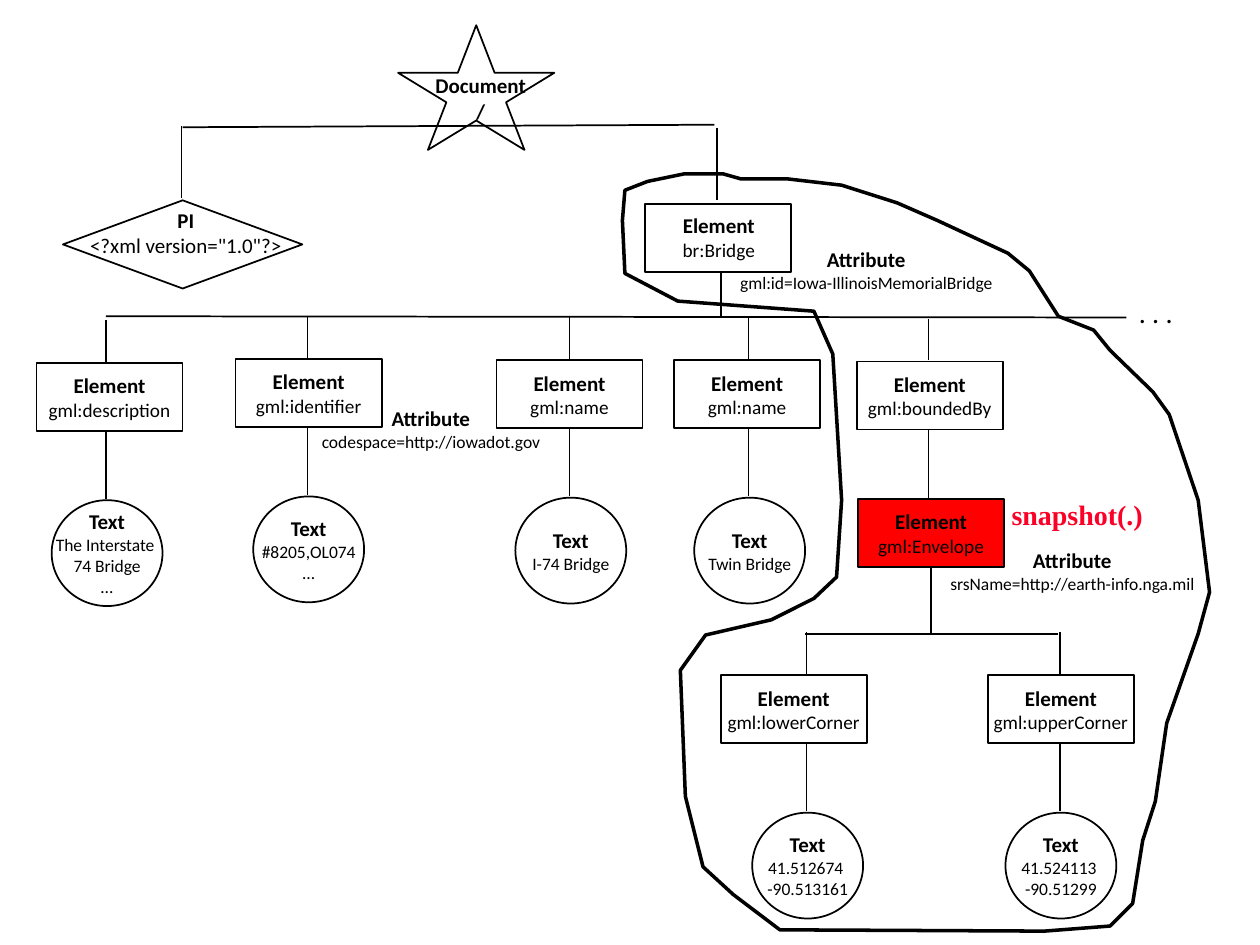
"""Build a slide showing an XML document tree with one outlined subtree."""
from lxml import etree
from pptx import Presentation
from pptx.dml.color import RGBColor
from pptx.enum.shapes import MSO_CONNECTOR as LINE, MSO_SHAPE as SHAPE
from pptx.enum.text import MSO_ANCHOR as ANCHOR, MSO_AUTO_SIZE as FIT, PP_ALIGN as ALIGN
from pptx.oxml.ns import qn
from pptx.util import Inches, Pt

BLACK = RGBColor(0x00, 0x00, 0x00)
WHITE = RGBColor(0xFF, 0xFF, 0xFF)
RED = RGBColor(0xFF, 0x00, 0x00)
CRIMSON = RGBColor(0xFC, 0x01, 0x28)

TITLE = {"name": "Calibri", "size": Pt(12), "bold": True}
PI = {**TITLE, "bold": False}
TAG = {**PI, "size": Pt(11)}
SMALL = {**PI, "size": Pt(10)}
DOTS = {**PI, "size": Pt(16)}
CALL = {"name": "Times New Roman", "size": Pt(16), "bold": True}

prs = Presentation()
prs.slide_width, prs.slide_height = Inches(10), Inches(7.5)
s = prs.slides.add_slide(prs.slide_layouts[6])


def write(tf, lines, fmt, first=TITLE, align=ALIGN.CENTER, color=BLACK):
    for i, line in enumerate(lines):
        p = tf.paragraphs[0] if i == 0 else tf.add_paragraph()
        p.alignment = align
        r = p.add_run()
        r.text = line
        r.font.color.rgb = color
        for key, value in (fmt if i else first).items():
            setattr(r.font, key, value)


def add_node(kind, x, y, w, h, fill=WHITE):
    sp = s.shapes.add_shape(kind, Inches(x), Inches(y), Inches(w), Inches(h))
    sp.shadow.inherit = False
    sp.fill.solid()
    sp.fill.fore_color.rgb = fill
    sp.line.color.rgb = BLACK
    sp.line.width = Pt(1)
    sp.text_frame.word_wrap = False
    sp.text_frame.vertical_anchor = ANCHOR.MIDDLE
    return sp


box_w, box_h = 1.16, 0.54
add_node(SHAPE.STAR_5_POINT, 3.16, 0.2, 1.24, 0.99)
add_node(SHAPE.DIAMOND, 0.5, 1.59, 1.9, 0.7)
add_node(SHAPE.RECTANGLE, 5.12, 1.62, box_w, box_h)

lines = [
    (1.45, 1.01, 5.67, 0.99),
    (0.84, 2.51, 8.94, 2.52),
    (6.39, 5.03, 8.4, 5.03),
    (1.44, 1, 1.44, 1.57),
    (5.69, 1.02, 5.69, 1.59),
    (5.72, 2.17, 5.72, 2.52),
    (7.39, 4.5, 7.39, 5.03),
]

elements = [
    (0.29, 2.88, 0.84, "gml:description", ["The Interstate ", "74 Bridge", "…"]),
    (1.87, 2.85, 2.44, "gml:identifier", ["#8205,OL074", "…"]),
    (3.94, 2.86, 4.52, "gml:name", ["I-74 Bridge"]),
    (5.35, 2.86, 5.94, "gml:name", ["Twin Bridge"]),
    (6.8, 2.87, 7.37, "gml:boundedBy", []),
    (5.72, 5.36, 6.4, "gml:lowerCorner", ["41.512674 ", "-90.513161"]),
    (7.84, 5.36, 8.41, "gml:upperCorner", ["41.524113 ", "-90.51299"]),
]
for x, y, stem, tag, leaf in elements:
    sp = add_node(SHAPE.RECTANGLE, x, y, box_w, box_h)
    write(sp.text_frame, ["Element", tag], TAG)
    lines += [(stem, y - 0.34, stem, y - 0.01), (stem, y + box_h, stem, y + 1.08)]
    if leaf:
        sp = add_node(SHAPE.OVAL, stem - 0.43, y + 1.09, 0.88, 0.84)
        write(sp.text_frame, ["Text", *leaf], SMALL)

sp = add_node(SHAPE.RECTANGLE, 6.81, 3.96, box_w, box_h, RED)
write(sp.text_frame, ["Element", "gml:Envelope"], TAG)

for x1, y1, x2, y2 in lines:
    c = s.shapes.add_connector(LINE.STRAIGHT, Inches(x1), Inches(y1), Inches(x2), Inches(y2))
    c.line.color.rgb = BLACK
    c.line.width = Pt(1)
    etree.SubElement(c._element.spPr, qn("a:effectLst"))

labels = [
    (3.35, 0.53, 0.93, False, ["Document", "/"], TITLE),
    (0.59, 1.6, 1.77, False, ["PI", '<?xml version="1.0"?>'], PI),
    (5.28, 1.64, 0.85, False, ["Element", "br:Bridge"], TAG),
    (5.6, 1.91, 2.55, True, ["Attribute", "gml:id=Iowa-IllinoisMemorialBridge"], SMALL),
    (2.26, 3.17, 2.32, True, ["Attribute", "codespace=http://iowadot.gov"], SMALL),
    (7.35, 4.3, 2.32, True, ["Attribute", "srsName=http://earth-info.nga.mil"], SMALL),
    (7.93, 3.9, 1.32, True, ["snapshot(.)"], CALL),
    (8.94, 2.3, 0.52, False, [". . ."], DOTS),
]
for x, y, w, wrap, words, fmt in labels:
    single = len(words) == 1
    h = 0.37 if single else 0.48
    tf = s.shapes.add_textbox(Inches(x), Inches(y), Inches(w), Inches(h)).text_frame
    tf.word_wrap = wrap
    tf.auto_size = FIT.SHAPE_TO_FIT_TEXT
    first, align = (fmt, ALIGN.LEFT) if single else (TITLE, ALIGN.CENTER)
    write(tf, words, fmt, first, align, CRIMSON if fmt is CALL else BLACK)
    if fmt is DOTS:
        tf.paragraphs[0].space_after = Pt(6)

outline = [
    (5.43, 1.38), (5.14, 1.44), (4.96, 1.51), (4.94, 1.75), (4.96, 2.17), (5.38, 2.39),
    (6.46, 2.47), (6.61, 2.81), (6.68, 3.97), (6.64, 4.58), (6.46, 4.75), (6.12, 4.92),
    (5.6, 5.04), (5.4, 5.32), (5.44, 6.32), (5.58, 6.88), (5.82, 7.1), (6.19, 7.38),
    (8.29, 7.39), (8.81, 7.35), (8.99, 7.17), (9.07, 6.67), (9.17, 6.36), (9.26, 5.74),
    (9.51, 5.03), (9.6, 4.7), (9.51, 3.97), (9.28, 3.29), (9.15, 3.11), (8.81, 2.78),
    (8.68, 2.62), (8.4, 2.51), (8.17, 2.15), (8, 2.01), (7.44, 1.75), (7.12, 1.61),
    (6.68, 1.47), (6.25, 1.42), (5.88, 1.42), (5.74, 1.38),
]
points = [(Inches(x), Inches(y)) for x, y in outline]
builder = s.shapes.build_freeform(*points[0])
builder.add_line_segments(points[1:], close=True)
sp = builder.convert_to_shape()
sp.shadow.inherit = False
sp.fill.background()
sp.line.color.rgb = BLACK
sp.line.width = Pt(2)

prs.save("out.pptx")
